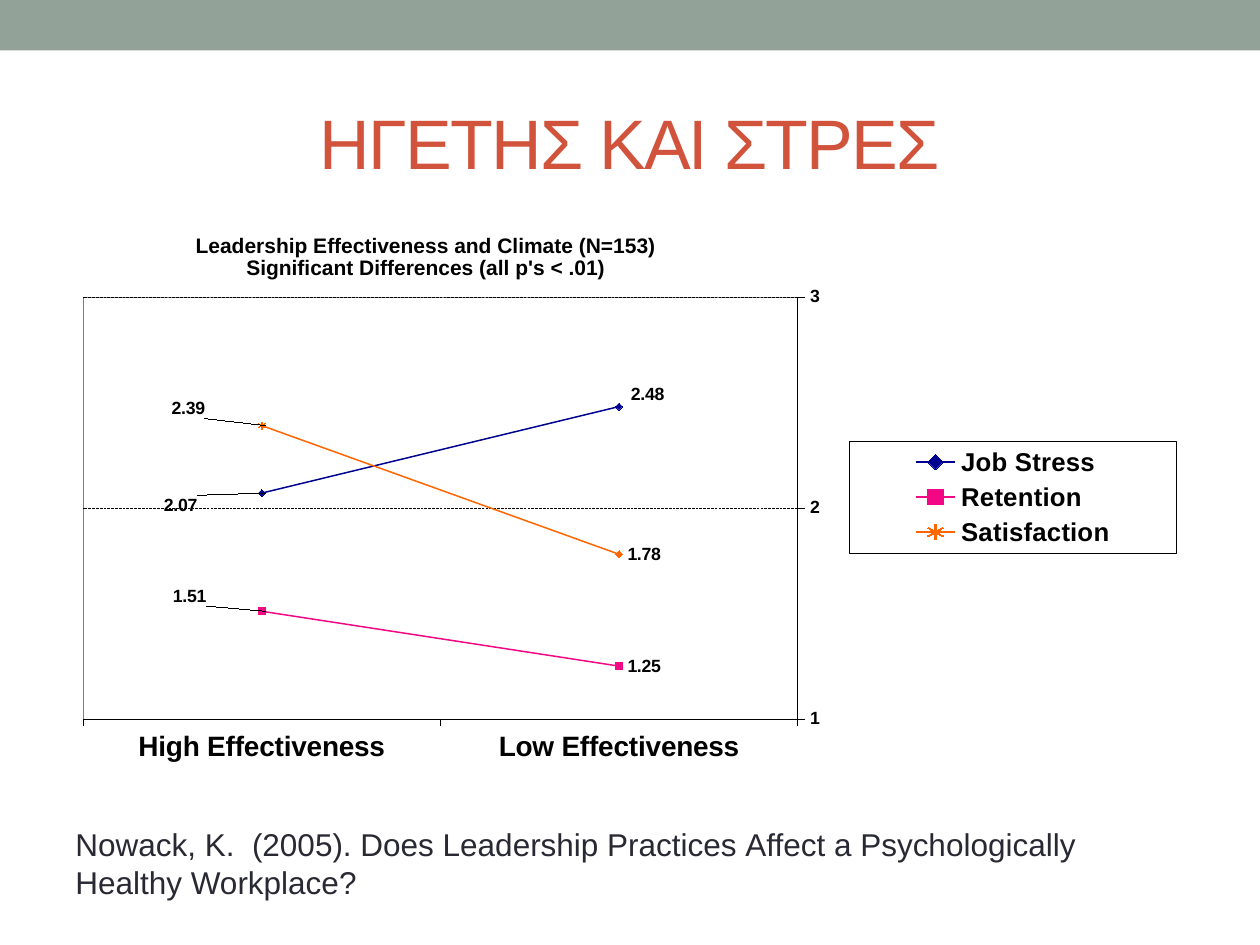
from dataclasses import dataclass
from typing import Any, Optional

from lxml import etree
from pptx import Presentation
from pptx.chart.data import CategoryChartData
from pptx.dml.color import RGBColor
from pptx.enum.chart import (XL_CHART_TYPE, XL_LABEL_POSITION, XL_LEGEND_POSITION,
                             XL_MARKER_STYLE, XL_TICK_MARK)
from pptx.enum.dml import MSO_LINE
from pptx.enum.shapes import MSO_SHAPE
from pptx.enum.text import MSO_ANCHOR, PP_ALIGN
from pptx.oxml import parse_xml
from pptx.oxml.ns import nsdecls
from pptx.util import Pt

LINES = XL_CHART_TYPE.LINE_MARKERS
RIGHT = XL_LABEL_POSITION.RIGHT
SIDE = XL_LEGEND_POSITION.RIGHT
DIAMOND, SQUARE, STAR = XL_MARKER_STYLE.DIAMOND, XL_MARKER_STYLE.SQUARE, XL_MARKER_STYLE.STAR
OUT, NONE = XL_TICK_MARK.OUTSIDE, XL_TICK_MARK.NONE
DASH = MSO_LINE.LONG_DASH
RECT = MSO_SHAPE.RECTANGLE
MIDDLE, TOP = MSO_ANCHOR.MIDDLE, MSO_ANCHOR.TOP
CENTER, LEFT = PP_ALIGN.CENTER, PP_ALIGN.LEFT

BLACK = RGBColor(0x00, 0x00, 0x00)
SAGE = RGBColor(0x93, 0xA2, 0x99)
RUST = RGBColor(0xD2, 0x53, 0x3C)
INK = RGBColor(0x29, 0x29, 0x34)
NAVY = RGBColor(0x00, 0x00, 0x90)
PINK = RGBColor(0xF2, 0x08, 0x84)
ORANGE = RGBColor(0xFF, 0x66, 0x00)
FACE = "Arial"
THIN = Pt(0.21)


@dataclass
class Box:
    x: float
    y: float
    w: float
    h: float

    def pts(self) -> tuple:
        return Pt(self.x), Pt(self.y), Pt(self.w), Pt(self.h)


@dataclass
class Note:
    text: str
    box: Box
    size: float
    color: RGBColor
    align: Any = LEFT
    anchor: Any = TOP
    track: int = 0


@dataclass
class Trend:
    name: str
    vals: tuple
    color: RGBColor
    mark: Any
    shifts: tuple


NOTES = (
    Note("ΗΓΕΤΗΣ ΚΑΙ ΣΤΡΕΣ", Box(36, 41.76, 648, 77.76), 40, RUST, CENTER, MIDDLE, -100),
    Note("Nowack, K.  (2005). Does Leadership Practices Αffect a Psychologically "
         "Healthy Workplace?", Box(36, 468, 609.84, 51.12), 18, INK),
)
TRENDS = (
    Trend("Job Stress", (2.48, 2.07), NAVY, DIAMOND, ((0.003, -0.02), (-0.095, 0.02))),
    Trend("Retention", (1.25, 1.51), PINK, SQUARE, (None, (-0.087, -0.025))),
    Trend("Satisfaction", (1.78, 2.39), ORANGE, STAR, (None, (-0.088, -0.028))),
)


def style(font: Any, size: float, color: RGBColor = BLACK, bold: bool = True) -> None:
    font.name, font.size, font.bold = FACE, Pt(size), bold
    font.color.rgb = color


def place(node: Any, spot: int, x: float, y: float,
          size: Optional[tuple] = None, mode: str = "edge", inner: bool = False) -> None:
    for old in node.xpath("./c:layout"):
        node.remove(old)
    tags = [("layoutTarget", "inner")] if inner else []
    if mode == "edge":
        tags += [("xMode", mode), ("yMode", mode)]
    tags += [("x", x), ("y", y)]
    if size:
        tags += [("w", size[0]), ("h", size[1])]
    body = "".join(f'<c:{tag} val="{val}"/>' for tag, val in tags)
    node.insert(spot, parse_xml(f'<c:layout {nsdecls("c")}><c:manualLayout>{body}'
                                "</c:manualLayout></c:layout>"))


def frame(color: str) -> etree.ElementBase:
    return parse_xml(f'<c:spPr {nsdecls("c", "a")}><a:solidFill><a:srgbClr val="FFFFFF"/>'
                     f'</a:solidFill><a:ln w="2667"><a:solidFill><a:srgbClr val="{color}"/>'
                     "</a:solidFill></a:ln></c:spPr>")


def write(slide: Any, note: Note) -> None:
    text = slide.shapes.add_textbox(*note.box.pts()).text_frame
    text.word_wrap = True
    text.vertical_anchor = note.anchor
    text.text = note.text
    line = text.paragraphs[0]
    line.alignment = note.align
    run = line.runs[0]
    style(run.font, note.size, note.color, False)
    if note.track:
        run._r.get_or_add_rPr().set("spc", str(note.track))


def set_mark(mark: Any, kind: Any, color: RGBColor) -> None:
    mark.style, mark.size = kind, 4
    mark.format.fill.solid()
    mark.format.fill.fore_color.rgb = color
    mark.format.line.color.rgb = color


def draw_trend(plot: Any, trend: Trend) -> None:
    line = plot.format.line
    line.color.rgb, line.width = trend.color, Pt(0.84)
    plot.smooth = False
    set_mark(plot.marker, trend.mark, trend.color)
    tags = plot.data_labels
    tags.show_value = True
    tags.number_format, tags.number_format_is_linked = "0.00", False
    tags.position = RIGHT
    style(tags.font, 10.1)
    for spot, shift in enumerate(trend.shifts):
        if shift:
            tag = plot.points[spot].data_label
            style(tag.font, 10.1)
            tag.position = RIGHT
            node = plot._element.xpath(f'./c:dLbls/c:dLbl[c:idx/@val="{spot}"]')[0]
            place(node, 1, *shift, mode="factor")
    if trend.mark == STAR:
        set_mark(plot.points[0].marker, DIAMOND, trend.color)
        edge = plot.points[0].format.line
        edge.color.rgb, edge.width = trend.color, Pt(0.84)


def draw_axis(axis: Any, size: float) -> None:
    axis.major_tick_mark, axis.minor_tick_mark = OUT, NONE
    style(axis.tick_labels.font, size)
    line = axis.format.line
    line.color.rgb, line.width = BLACK, THIN


def draw_chart(slide: Any, box: Box) -> None:
    data = CategoryChartData()
    data.categories = ("Low Effectiveness", "High Effectiveness")
    for trend in TRENDS:
        data.add_series(trend.name, trend.vals)
    chart = slide.shapes.add_chart(LINES, *box.pts(), data).chart
    style(chart.font, 16)
    chart.plots[0].vary_by_categories = False
    for plot, trend in zip(chart.plots[0].series, TRENDS):
        draw_trend(plot, trend)

    draw_axis(chart.category_axis, 16)
    chart.category_axis.reverse_order = True
    scale = chart.value_axis
    draw_axis(scale, 10.1)
    scale.minimum_scale, scale.maximum_scale, scale.major_unit = 1, 3, 1
    scale.tick_labels.number_format = "0"
    scale.tick_labels.number_format_is_linked = False
    scale.has_major_gridlines = True
    grid = scale.major_gridlines.format.line
    grid.color.rgb, grid.width, grid.dash_style = BLACK, THIN, DASH

    chart.has_title = True
    head = chart.chart_title
    head.include_in_layout = False
    head.text_frame.text = ("Leadership Effectiveness and Climate (N=153)\n"
                            "Significant Differences (all p's < .01)")
    for line in head.text_frame.paragraphs:
        style(line.runs[0].font, 12)
    chart.has_legend = True
    chart.legend.position = SIDE
    chart.legend.include_in_layout = False
    style(chart.legend.font, 14.7)

    title, key, area = (chart.element.xpath(f"./c:chart/c:{tag}")[0]
                        for tag in ("title", "legend", "plotArea"))
    place(title, 1, 0.115, 0.03)
    place(key, 1, 0.702, 0.382, (0.292, 0.184))
    key.xpath("./c:txPr")[0].addprevious(frame("000000"))
    place(area, 0, 0.018, 0.143, (0.638, 0.698), inner=True)
    area.append(frame("808080"))


def main() -> None:
    deck = Presentation()
    deck.slide_width, deck.slide_height = Pt(720), Pt(540)
    slide = deck.slides.add_slide(deck.slide_layouts[6])
    band = slide.shapes.add_shape(RECT, *Box(0, 0, 720, 28.8).pts())
    band.shadow.inherit = False
    band.fill.solid()
    band.fill.fore_color.rgb = SAGE
    band.line.fill.background()
    draw_chart(slide, Box(36, 120.24, 640.08, 345.6))
    for note in NOTES:
        write(slide, note)
    deck.save("out.pptx")


if __name__ == "__main__":
    main()
